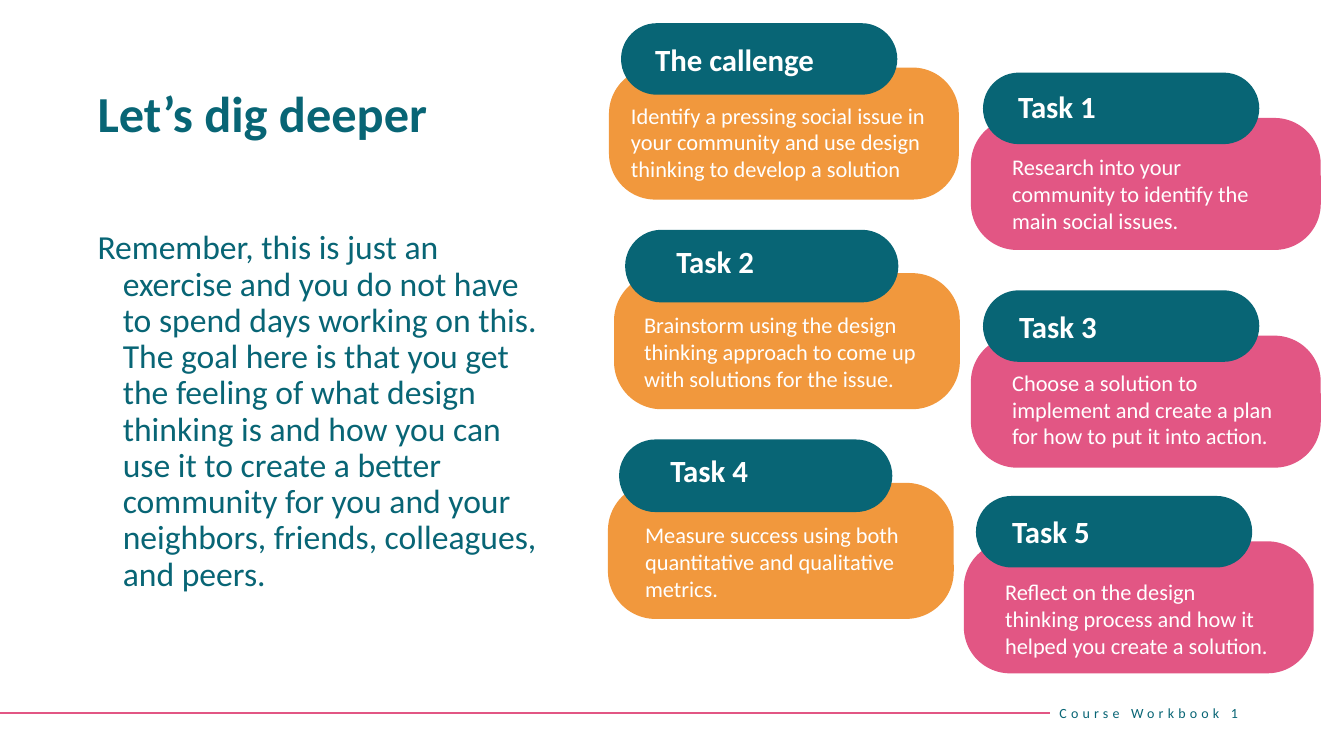
from dataclasses import dataclass

from lxml import etree
from pptx import Presentation
from pptx.dml.color import RGBColor
from pptx.enum.shapes import MSO_CONNECTOR, MSO_SHAPE
from pptx.enum.text import MSO_ANCHOR, MSO_AUTO_SIZE
from pptx.oxml.ns import qn
from pptx.util import Inches, Pt

ROUND = MSO_SHAPE.ROUNDED_RECTANGLE
LINE = MSO_CONNECTOR.STRAIGHT
MIDDLE = MSO_ANCHOR.MIDDLE
FIT = MSO_AUTO_SIZE.SHAPE_TO_FIT_TEXT

FONT = "Calibri"
TEAL, ORANGE, PINK, WHITE = "086575", "F1983D", "E25684", "FFFFFF"


@dataclass
class Style:
    """Sizes of a card's body and tab, and the tab's offset from the body."""
    fill: str
    width: float
    height: float
    tab_width: float
    tab_height: float
    shift: float
    rise: float


@dataclass
class Box:
    left: float
    top: float
    width: float
    height: float


@dataclass
class Card:
    style: Style
    left: float
    top: float
    head: str
    head_box: Box
    note: str
    note_box: Box


WIDE = Style(ORANGE, 3.47, 1.31, 2.74, 0.71, 0.12, 0.44)
TALL = Style(ORANGE, 3.43, 1.35, 2.71, 0.72, 0.11, 0.43)
ROSE = Style(PINK, 3.47, 1.31, 2.74, 0.71, 0.12, 0.45)

CARDS = [
    Card(WIDE, 6.04, 0.67, "The callenge", Box(6.4, 0.36, 2.74, 0.47),
         "Identify a pressing social issue in your community and use design "
         "thinking to develop a solution", Box(6.16, 0.96, 3.24, 0.91)),
    Card(ROSE, 9.63, 1.17, "Task 1", Box(10, 0.82, 2.22, 0.47),
         "Research into your community to identify the main social issues.",
         Box(9.94, 1.47, 2.85, 0.91)),
    Card(TALL, 6.09, 2.71, "Task 2", Box(6.61, 2.36, 2.09, 0.48),
         "Brainstorm using the design thinking approach to come up with "
         "solutions for the issue.", Box(6.29, 3.04, 3.03, 0.91)),
    Card(ROSE, 9.63, 3.33, "Task 3", Box(10.01, 3, 2.33, 0.47),
         "Choose a solution to implement and create a plan for how to put it "
         "into action.", Box(9.94, 3.61, 2.85, 0.91)),
    Card(TALL, 6.03, 4.79, "Task 4", Box(6.55, 4.43, 2.09, 0.48),
         "Measure success using both quantitative and qualitative metrics.",
         Box(6.3, 5.12, 3.27, 0.91)),
    Card(ROSE, 9.56, 5.37, "Task 5", Box(9.94, 5.04, 2.33, 0.47),
         "Reflect on the design thinking process and how it helped you create "
         "a solution.", Box(9.87, 5.69, 2.85, 0.91)),
]


def color(code: str) -> RGBColor:
    return RGBColor.from_string(code)


def place(box: Box) -> list:
    return [Inches(n) for n in (box.left, box.top, box.width, box.height)]


def add_text(slide, box: Box, text: str, size: float, code: str,
             bold: bool = False):
    shape = slide.shapes.add_textbox(*place(box))
    shape.text_frame.word_wrap = True
    run = shape.text_frame.paragraphs[0].add_run()
    run.text = text
    font = run.font
    font.name, font.size, font.bold = FONT, Pt(size), bold
    font.color.rgb = color(code)
    return shape


def add_pill(slide, box: Box, fill: str, curve: float) -> None:
    """Draw a rounded block; curve is the radius over the height."""
    pill = slide.shapes.add_shape(ROUND, *place(box))
    pill.adjustments[0] = curve
    pill.shadow.inherit = False
    pill.fill.solid()
    pill.fill.fore_color.rgb = color(fill)
    pill.line.fill.background()


def add_card(slide, card: Card) -> None:
    style = card.style
    body = Box(card.left, card.top, style.width, style.height)
    tab = Box(card.left + style.shift, card.top - style.rise,
              style.tab_width, style.tab_height)
    add_pill(slide, body, style.fill, 0.35)
    add_pill(slide, tab, TEAL, 0.5)
    head = add_text(slide, card.head_box, card.head, 22, WHITE, True)
    note = add_text(slide, card.note_box, card.note, 16, WHITE)
    for label in (head, note):
        label.text_frame.auto_size = FIT


def add_intro(slide) -> None:
    title = add_text(slide, Box(0.87, 0.83, 4.6, 0.88), "Let’s dig deeper",
                     36, TEAL, True)
    intro = add_text(
        slide, Box(0.87, 2.24, 4.6, 4.21),
        "Remember, this is just an exercise and you do not have to spend days "
        "working on this. The goal here is that you get the feeling of what "
        "design thinking is and how you can use it to create a better "
        "community for you and your neighbors, friends, colleagues, and "
        "peers.", 24, TEAL)
    for shape in (title, intro):
        shape.text_frame.paragraphs[0].line_spacing = 0.9
    props = intro.text_frame.paragraphs[0]._p.get_or_add_pPr()
    props.set("marL", str(Inches(0.25)))
    props.set("indent", str(Inches(-0.25)))


def add_footer(slide) -> None:
    label = add_text(slide, Box(10.41, 6.87, 2.73, 0.4), "Course Workbook 1",
                     10, TEAL)
    label.text_frame.vertical_anchor = MIDDLE
    run = label.text_frame.paragraphs[0].runs[0]
    run._r.get_or_add_rPr().set("spc", "300")
    rule = slide.shapes.add_connector(LINE, Inches(0), Inches(7.07),
                                      Inches(10.41), Inches(7.07))
    rule.end_connect(label, 1)
    rule.line.color.rgb = color(PINK)
    rule.line.width = Pt(1.5)
    etree.SubElement(rule._element.spPr, qn("a:effectLst"))


def main() -> None:
    deck = Presentation()
    deck.slide_width, deck.slide_height = Inches(13.33), Inches(7.5)
    slide = deck.slides.add_slide(deck.slide_layouts[6])
    add_footer(slide)
    add_intro(slide)
    for card in CARDS:
        add_card(slide, card)
    deck.save("out.pptx")


if __name__ == "__main__":
    main()
